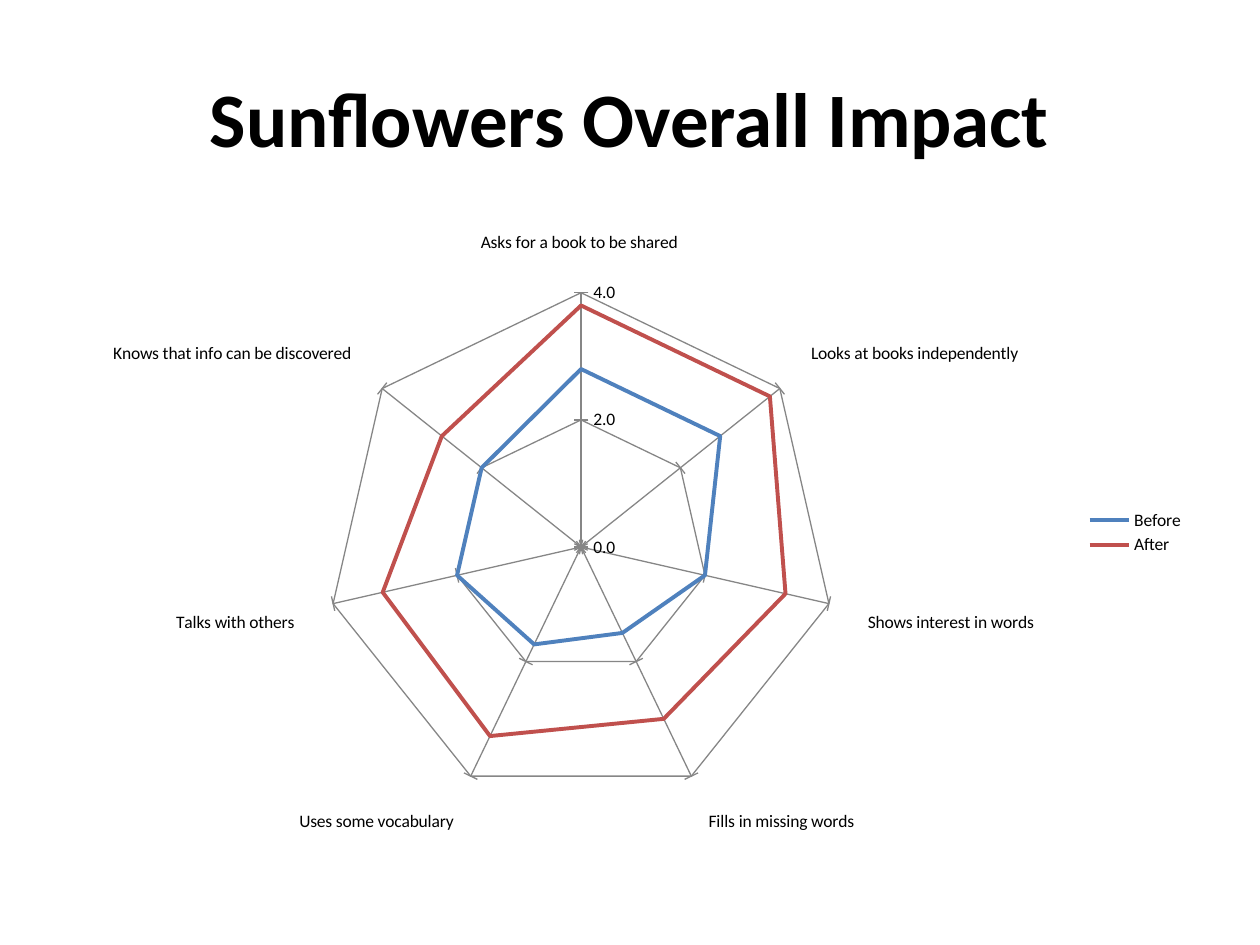
from pptx import Presentation
from pptx.chart.data import CategoryChartData
from pptx.dml.color import RGBColor
from pptx.enum.chart import XL_CHART_TYPE, XL_LEGEND_POSITION, XL_TICK_MARK
from pptx.enum.text import MSO_ANCHOR, PP_ALIGN
from pptx.util import Cm, Pt

FONT = "Calibri"
BLACK = RGBColor(0x00, 0x00, 0x00)
GRAY = RGBColor(0x86, 0x86, 0x86)
BLUE = RGBColor(0x4F, 0x81, 0xBD)
RED = RGBColor(0xC0, 0x50, 0x4D)

SKILLS = [
    "Asks for a book to be shared ",
    "Looks at books independently",
    "Shows interest in words",
    "Fills in missing words",
    "Uses some vocabulary",
    "Talks with others",
    "Knows that info can be discovered",
]
RATINGS = [
    ("Before", BLUE, (2.8, 2.8, 2, 1.5, 1.7, 2, 2)),
    ("After", RED, (3.8, 3.8, 3.3, 3, 3.3, 3.2, 2.8)),
]


def format_font(font, size, bold=False, color=BLACK):
    font.name = FONT
    font.size = Pt(size)
    font.bold = bold
    font.color.rgb = color


def write_text(shape, text, size=18, bold=False, color=BLACK, align=PP_ALIGN.LEFT):
    frame = shape.text_frame
    frame.word_wrap = True
    frame.vertical_anchor = MSO_ANCHOR.MIDDLE
    paragraph = frame.paragraphs[0]
    paragraph.alignment = align
    run = paragraph.add_run()
    run.text = text
    format_font(run.font, size, bold, color)


def place_title(slide, left, top, width, height):
    title = slide.shapes.title
    title.left, title.top, title.width, title.height = left, top, width, height
    write_text(title, "Sunflowers Overall Impact", size=44, bold=True,
               align=PP_ALIGN.CENTER)


def format_line(line, color, width):
    line.color.rgb = color
    line.width = Pt(width)


def place_impact_chart(slide, left, top, width, height):
    data = CategoryChartData(number_format="0.0")
    data.categories = SKILLS
    for name, _, values in RATINGS:
        data.add_series(name, values)
    chart = slide.shapes.add_chart(
        XL_CHART_TYPE.RADAR, left, top, width, height, data).chart
    chart.has_title = False
    format_font(chart.font, 10)

    for series, (_, color, _) in zip(chart.plots[0].series, RATINGS):
        series.smooth = False
        format_line(series.format.line, color, 2.25)

    for axis, tick in ((chart.category_axis, XL_TICK_MARK.OUTSIDE),
                       (chart.value_axis, XL_TICK_MARK.CROSS)):
        axis.has_major_gridlines = True
        axis.major_tick_mark = tick
        format_line(axis.major_gridlines.format.line, GRAY, 0.75)
        format_line(axis.format.line, GRAY, 0.75)
    value_axis = chart.value_axis
    value_axis.minimum_scale = 0
    value_axis.maximum_scale = 4
    value_axis.major_unit = 2
    value_axis.tick_labels.number_format = "0.0"
    value_axis.tick_labels.number_format_is_linked = False

    chart.has_legend = True
    chart.legend.position = XL_LEGEND_POSITION.RIGHT
    chart.legend.include_in_layout = False


def main():
    presentation = Presentation()
    presentation.slide_width = Cm(25.4)
    presentation.slide_height = Cm(19.05)
    slide = presentation.slides.add_slide(presentation.slide_layouts[5])
    margin = Cm(1.27)
    content_width = presentation.slide_width - 2 * margin
    place_title(slide, margin, Cm(0.76), content_width, Cm(3.18))
    place_impact_chart(slide, margin, Cm(4.45), content_width, Cm(12.57))
    presentation.save("out.pptx")


if __name__ == "__main__":
    main()
